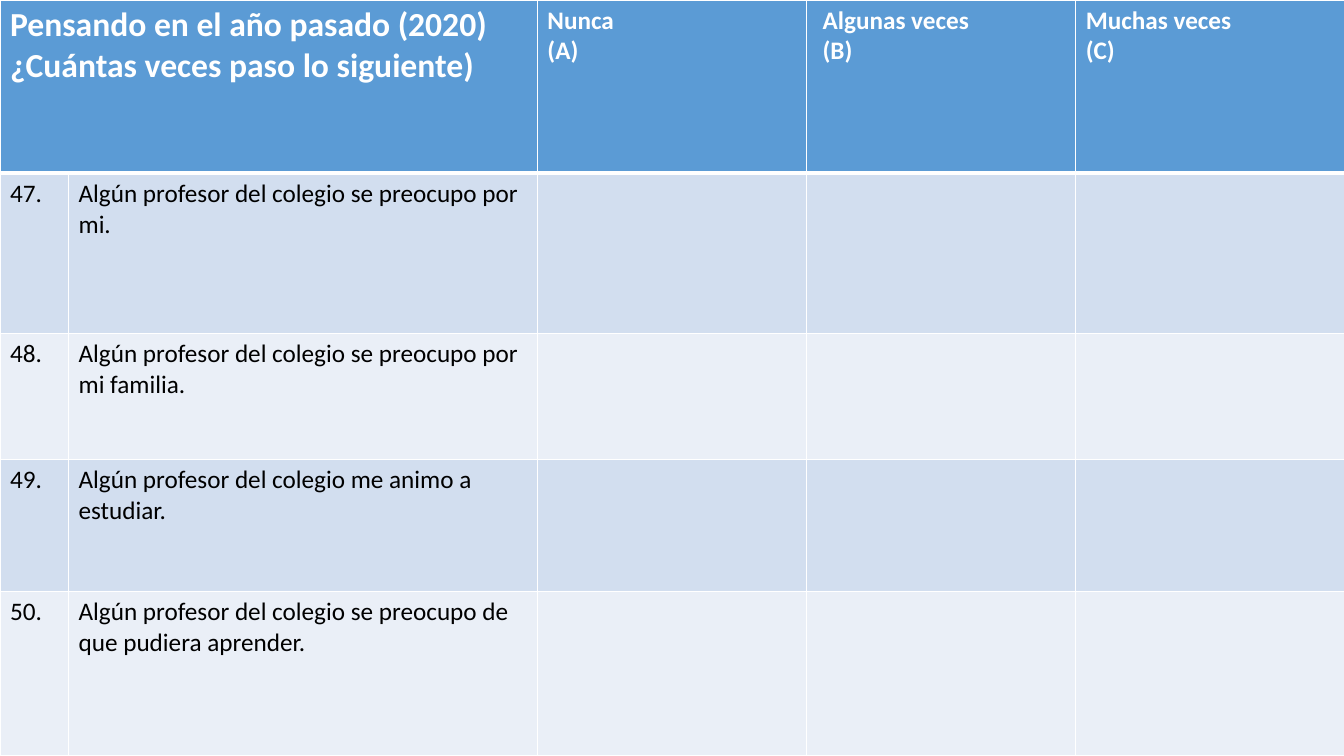
from lxml import etree
from pptx import Presentation
from pptx import util as u
from pptx.dml.color import RGBColor
from pptx.oxml import ns

WHITE = RGBColor(0xFF, 0xFF, 0xFF)
BLACK = RGBColor(0x00, 0x00, 0x00)
HEADER_BLUE = RGBColor(0x5B, 0x9B, 0xD5)
BAND_DARK = RGBColor(0xD2, 0xDE, 0xEF)
BAND_LIGHT = RGBColor(0xEA, 0xEF, 0xF7)

COLUMN_WIDTHS = [0.68, 4.65, 2.67, 2.67, 2.67]
ROW_HEIGHTS = [1.72, 1.59, 1.25, 1.31, 1.63]
FIRST_NUMBER = 47

HEADING = "Pensando en el año pasado (2020) ¿Cuántas veces paso lo siguiente)"
ANSWERS = ["Nunca\n(A)", "Algunas veces\n(B)", "Muchas veces\n(C)"]
STATEMENTS = [
    "Algún profesor del colegio se preocupo por mi.",
    "Algún profesor del colegio se preocupo por mi familia.",
    "Algún profesor del colegio me animo a estudiar.",
    "Algún profesor del colegio se preocupo de que pudiera aprender.",
]


class Survey:
    """Holds the style and the current slide."""

    font = "Calibri"
    size = 18

    def __init__(self, deck):
        self.slide = deck.slides.add_slide(deck.slide_layouts[6])

    def table(self, widths, heights):
        frame = self.slide.shapes.add_table(
            len(heights), len(widths), 0, 0,
            u.Inches(sum(widths)), u.Inches(sum(heights)))
        for column, width in zip(frame.table.columns, widths):
            column.width = u.Inches(width)
        for row, height in zip(frame.table.rows, heights):
            row.height = u.Inches(height)
        return frame.table

    def label(self, cell, wording, color, size=None, bold=False):
        cell.text = wording
        for paragraph in cell.text_frame.paragraphs:
            font = paragraph.font
            font.name, font.size = self.font, u.Pt(size or self.size)
            font.bold, font.color.rgb = bold, color

    def paint(self, cell, fill, top=1, bottom=1):
        cell.fill.solid()
        cell.fill.fore_color.rgb = fill
        # Borders come before the fill in the cell properties
        properties = cell._tc.get_or_add_tcPr()
        sides = {"L": 1, "R": 1, "T": top, "B": bottom}
        for place, (side, width) in enumerate(sides.items()):
            border = etree.Element(ns.qn(f"a:ln{side}"), w=str(u.Pt(width)))
            solid = etree.SubElement(border, ns.qn("a:solidFill"))
            etree.SubElement(solid, ns.qn("a:srgbClr"), val=str(WHITE))
            properties.insert(place, border)


def main():
    deck = Presentation()
    deck.slide_width, deck.slide_height = u.Inches(13.33), u.Inches(7.5)
    survey = Survey(deck)
    grid = survey.table(COLUMN_WIDTHS, ROW_HEIGHTS)

    # Cell colours and borders, with a thick rule under the header
    for row_index, row in enumerate(grid.rows):
        band = BAND_DARK if row_index % 2 else BAND_LIGHT
        for cell in row.cells:
            survey.paint(cell, band if row_index else HEADER_BLUE,
                         top=3 if row_index == 1 else 1,
                         bottom=3 if row_index == 0 else 1)

    # Header row
    grid.cell(0, 0).merge(grid.cell(0, 1))
    survey.label(grid.cell(0, 0), HEADING, WHITE, size=24, bold=True)
    for column, answer in enumerate(ANSWERS, start=2):
        survey.label(grid.cell(0, column), answer, WHITE, bold=True)
    grid.cell(0, 3).margin_left = u.Inches(0.16)

    # Numbered statements, with the answer cells left open
    for row_index, statement in enumerate(STATEMENTS, start=1):
        number = FIRST_NUMBER + row_index - 1
        survey.label(grid.cell(row_index, 0), f"{number}.", BLACK)
        survey.label(grid.cell(row_index, 1), statement, BLACK)

    deck.save("out.pptx")


if __name__ == "__main__":
    main()
